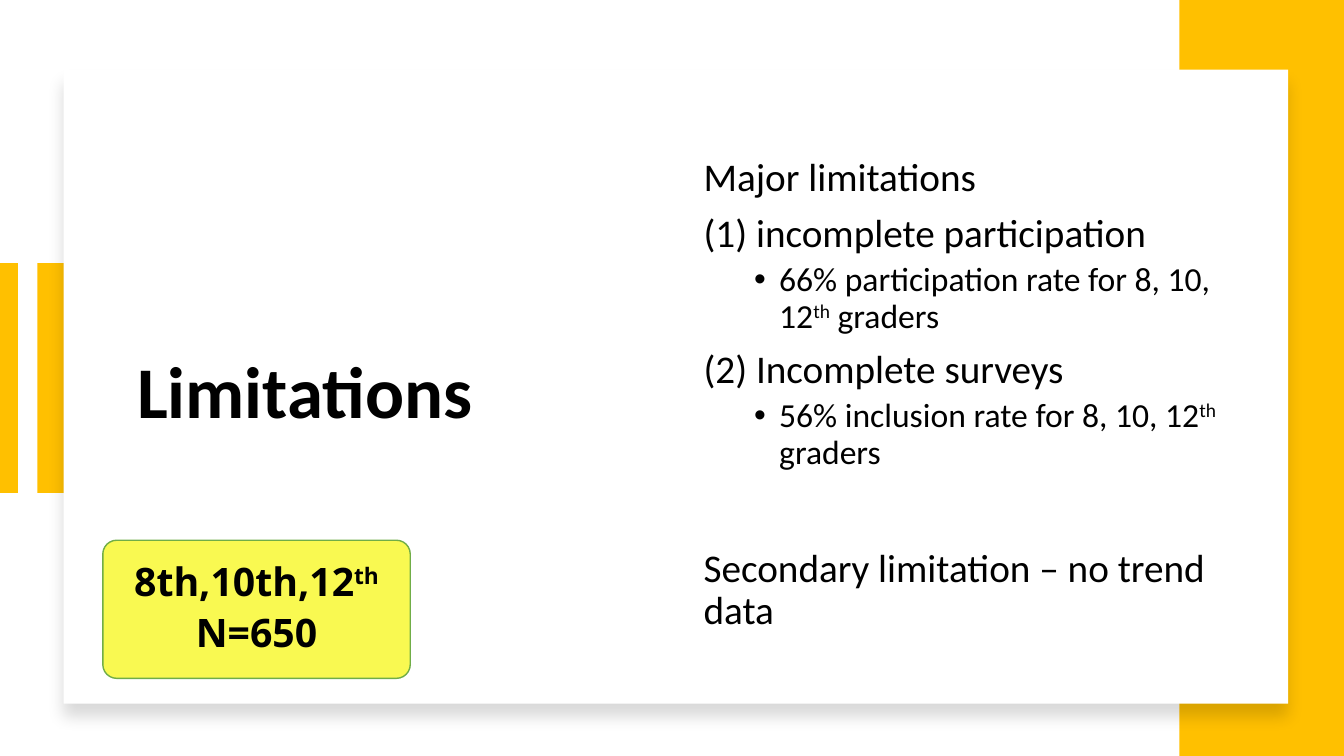
from lxml.etree import SubElement
from pptx import Presentation
from pptx.dml.color import RGBColor
from pptx.enum.shapes import MSO_CONNECTOR as Link, MSO_SHAPE as Preset
from pptx.enum.text import MSO_ANCHOR as Anchor, MSO_AUTO_SIZE as AutoSize, PP_ALIGN as Align
from pptx.oxml.ns import qn
from pptx.util import Inches, Pt

GOLD = RGBColor(0xFF, 0xC0, 0x00)
WHITE = RGBColor(0xFF, 0xFF, 0xFF)
BLACK = RGBColor(0x00, 0x00, 0x00)
YELLOW = RGBColor(0xF9, 0xF9, 0x51)
GREEN = RGBColor(0x70, 0xAD, 0x47)

COLUMNS, ROWS = 160, 90
WIDTH, HEIGHT = Inches(13.33), Inches(7.5)

HEADING = {"name": "Calibri", "size": Pt(52), "bold": True}
POINT = {"name": "Calibri", "size": Pt(28), "bold": False}
DETAIL = {"name": "Calibri", "size": Pt(24), "bold": False}
BADGE = {"name": "Open Sans", "size": Pt(28), "bold": True}

LEFT = {"alignment": Align.LEFT, "line_spacing": 0.9}
TOP_LEVEL = {**LEFT, "space_before": Pt(10)}
SUB_LEVEL = {**LEFT, "space_before": Pt(5), "level": 1}
CLOSING = {**LEFT, "space_before": Pt(55)}
CENTERED = {"alignment": Align.CENTER, "line_spacing": 0.9, "space_after": Pt(6)}

LIMITATIONS = [
    ("Major limitations", TOP_LEVEL, POINT),
    ("(1) incomplete participation", TOP_LEVEL, POINT),
    ("66% participation rate for 8, 10, 12^th^ graders", SUB_LEVEL, DETAIL),
    ("(2) Incomplete surveys", TOP_LEVEL, POINT),
    ("56% inclusion rate for 8, 10, 12^th^ graders", SUB_LEVEL, DETAIL),
    ("Secondary limitation – no trend data", CLOSING, POINT),
]
SAMPLE = [("8th,10th,12^th", CENTERED, BADGE), ("N=650", CENTERED, BADGE)]


def apply(target, values):
    for name, value in values.items():
        setattr(target, name, value)


class PageBuilder:
    def __init__(self, deck):
        self.page = deck.slides.add_slide(deck.slide_layouts[1])

    def x(self, columns):
        return int(WIDTH * columns / COLUMNS)

    def y(self, rows):
        return int(HEIGHT * rows / ROWS)

    def area(self, left, top, width, height):
        return self.x(left), self.y(top), self.x(width), self.y(height)

    def block(self, area, fill, preset=Preset.RECTANGLE, line=None):
        box = self.page.shapes.add_shape(preset, *self.area(*area))
        box.shadow.inherit = False
        box.fill.solid()
        box.fill.fore_color.rgb = fill
        if line is None:
            box.line.fill.background()
        else:
            box.line.color.rgb = line
            box.line.width = Pt(1)
        return box

    def soft_shadow(self, box):
        effects = box._element.spPr.find(qn("a:effectLst"))
        shadow = SubElement(effects, qn("a:outerShdw"), blurRad=str(Pt(11)),
                            dist=str(Pt(10)), dir="5400000", algn="t", rotWithShape="0")
        color = SubElement(shadow, qn("a:srgbClr"), val=str(BLACK))
        SubElement(color, qn("a:alpha"), val="15000")

    def stripe(self, column, top, bottom, color, width):
        line = self.page.shapes.add_connector(
            Link.STRAIGHT, self.x(column), self.y(top), self.x(column), self.y(bottom))
        line.line.color.rgb = color
        line.line.width = Pt(width)
        SubElement(line._element.spPr, qn("a:effectLst"))

    def placeholder(self, index, area, lines):
        box = self.page.placeholders[index]
        self.page.shapes._spTree.append(box._element)
        apply(box, dict(zip(("left", "top", "width", "height"), self.area(*area))))
        self.fill_text(box, lines)

    def fill_text(self, box, lines):
        frame = box.text_frame
        apply(frame, {"word_wrap": True, "auto_size": AutoSize.NONE,
                      "vertical_anchor": Anchor.MIDDLE})
        for number, (text, layout, style) in enumerate(lines):
            para = frame.add_paragraph() if number else frame.paragraphs[0]
            apply(para, layout)
            self.bullet(para)
            for part, words in enumerate(text.split("^")):
                span = para.add_run()
                span.text = words
                apply(span.font, style)
                span.font.color.rgb = BLACK
                if part % 2:
                    span._r.get_or_add_rPr().set("baseline", "30000")

    def bullet(self, para):
        settings = para._p.get_or_add_pPr()
        nested = para.level > 0
        settings.set("marL", str(Inches(0.75 if nested else 0)))
        settings.set("indent", str(Inches(-0.25 if nested else 0)))
        if nested:
            SubElement(settings, qn("a:buFont"), typeface="Arial")
            SubElement(settings, qn("a:buChar"), char="•")
        else:
            SubElement(settings, qn("a:buNone"))


def main():
    deck = Presentation()
    apply(deck, {"slide_width": WIDTH, "slide_height": HEIGHT})
    builder = PageBuilder(deck)

    builder.block((4.44, 31.32, 4.08, 27.36), GOLD)
    builder.stripe(0.96, 31.32, 58.68, GOLD, 14)
    builder.block((140.4, 0, 19.6, ROWS), GOLD)
    card = builder.block((7.56, 8.28, 145.8, 75.48), WHITE)
    builder.soft_shadow(card)

    builder.placeholder(0, (15.12, 16.32, 52.56, 61.44), [("Limitations", LEFT, HEADING)])
    builder.placeholder(1, (82.56, 16.32, 65.28, 61.44), LIMITATIONS)

    badge = builder.block((12.24, 64.32, 36.6, 16.44), YELLOW, Preset.ROUNDED_RECTANGLE, GREEN)
    badge.adjustments[0] = 0.1
    builder.fill_text(badge, SAMPLE)

    deck.save("out.pptx")


if __name__ == "__main__":
    main()
